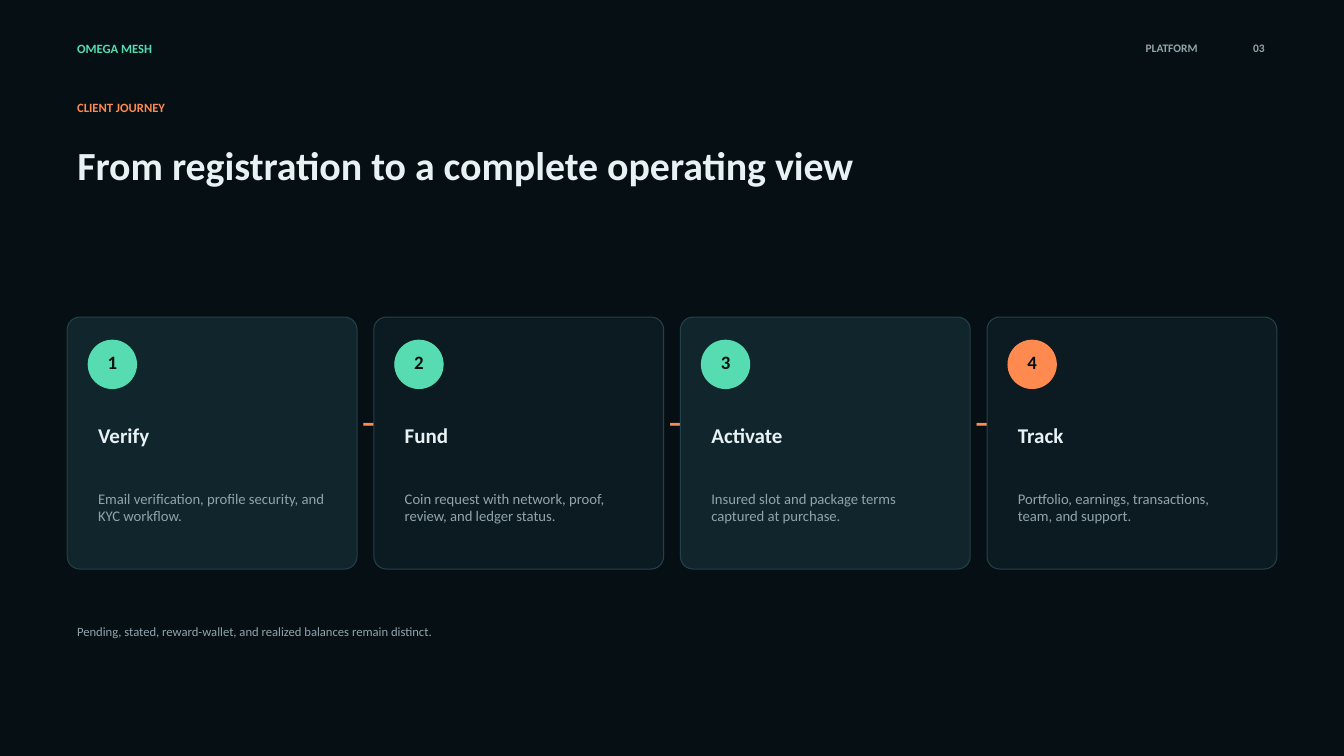
import pptx
import pptx.util
import pptx.dml.color
import pptx.enum.shapes
import pptx.enum.text

RGB = pptx.dml.color.RGBColor
ALIGN = pptx.enum.text.PP_ALIGN
NIGHT = RGB(0x06, 0x10, 0x14)
MINT = RGB(0x56, 0xDC, 0xB0)
CORAL = RGB(0xFF, 0x8A, 0x50)
WHITE = RGB(0xE8, 0xF1, 0xF3)
GREY = RGB(0x91, 0xA4, 0xAC)
TEAL = RGB(0x10, 0x25, 0x2C)
DEEP = RGB(0x0C, 0x1B, 0x21)
EDGE = RGB(0x24, 0x40, 0x4A)

COLS, ROWS = 128, 72
LEFT = 6.4
WIDTH = 27.6
PITCH = 29.2
STEPS = [
    ("Verify", "Email verification, profile security, and KYC workflow."),
    ("Fund", "Coin request with network, proof, review, and ledger status."),
    ("Activate", "Insured slot and package terms captured at purchase."),
    ("Track", "Portfolio, earnings, transactions, team, and support."),
]


def write(frame, text, size=9, color=GREY, bold=False, align=ALIGN.LEFT):
    frame.word_wrap = True
    frame.auto_size = pptx.enum.text.MSO_AUTO_SIZE.NONE
    frame.vertical_anchor = pptx.enum.text.MSO_ANCHOR.MIDDLE
    para = frame.paragraphs[0]
    para.alignment = align
    run = para.add_run()
    run.text = text
    run.font.name = "Calibri"
    run.font.size = pptx.util.Pt(size)
    run.font.bold = bold
    run.font.color.rgb = color


class Board:
    def __init__(self, deck):
        self.unit_x = deck.slide_width / COLS
        self.unit_y = deck.slide_height / ROWS
        self.slide = deck.slides.add_slide(deck.slide_layouts[5])
        self.slide.background.fill.solid()
        self.slide.background.fill.fore_color.rgb = NIGHT

    def place(self, col, row, wide, high):
        return (round(col * self.unit_x), round(row * self.unit_y),
                round(wide * self.unit_x), round(high * self.unit_y))

    def title(self, text, *area, **style):
        head = self.slide.shapes.title
        head.left, head.top, head.width, head.height = self.place(*area)
        write(head.text_frame, text, **style)

    def label(self, text, *area, **style):
        box = self.slide.shapes.add_textbox(*self.place(*area))
        write(box.text_frame, text, **style)

    def panel(self, *area, fill, edge, curve):
        kind = pptx.enum.shapes.MSO_SHAPE.ROUNDED_RECTANGLE
        shape = self.slide.shapes.add_shape(kind, *self.place(*area))
        shape.adjustments[0] = curve
        shape.shadow.inherit = False
        shape.fill.solid()
        shape.fill.fore_color.rgb = fill
        shape.line.color.rgb = edge
        shape.line.width = pptx.util.Pt(0.75)

    def step(self, index, name, detail):
        left = LEFT + index * PITCH
        inner = left + 2
        last = index == len(STEPS) - 1
        tone = CORAL if last else MINT
        self.panel(left, 30.2, WIDTH, 24, fill=DEEP if index % 2 else TEAL,
                   edge=EDGE, curve=0.05)
        self.panel(inner, 32.4, 4.6, 4.6, fill=tone, edge=tone, curve=0.5)
        self.label(str(index + 1), inner, 32.2, 4.6, 4.6, size=13.5,
                   color=NIGHT, bold=True, align=ALIGN.CENTER)
        self.label(name, inner, 39, 23.6, 4.8, size=15, color=WHITE, bold=True)
        self.label(detail, inner, 44.6, 23.6, 7.4, size=10.5)
        if not last:
            self.label("→", left + 27.2, 38.2, 2.4, 4, size=18,
                       color=CORAL, bold=True, align=ALIGN.CENTER)


def main():
    deck = pptx.Presentation()
    deck.slide_width = pptx.util.Inches(13.33)
    deck.slide_height = pptx.util.Inches(7.5)
    board = Board(deck)
    board.label("OMEGA MESH", LEFT, 3.4, 23, 2.4, color=MINT, bold=True)
    board.label("PLATFORM", 88, 3.4, 27, 2.4, size=8.2, bold=True, align=ALIGN.RIGHT)
    board.label("03", 116, 3.4, 5.4, 2.4, size=8.2, bold=True, align=ALIGN.RIGHT)
    board.label("CLIENT JOURNEY", LEFT, 9, 35, 2.4, color=CORAL, bold=True)
    board.title("From registration to a complete operating view",
                LEFT, 12.2, 110, 7, size=28.5, color=WHITE, bold=True)
    for index, (name, detail) in enumerate(STEPS):
        board.step(index, name, detail)
    board.label("Pending, stated, reward-wallet, and realized balances remain distinct.",
                LEFT, 58, 112, 4.2)
    deck.save("out.pptx")


if __name__ == "__main__":
    main()
